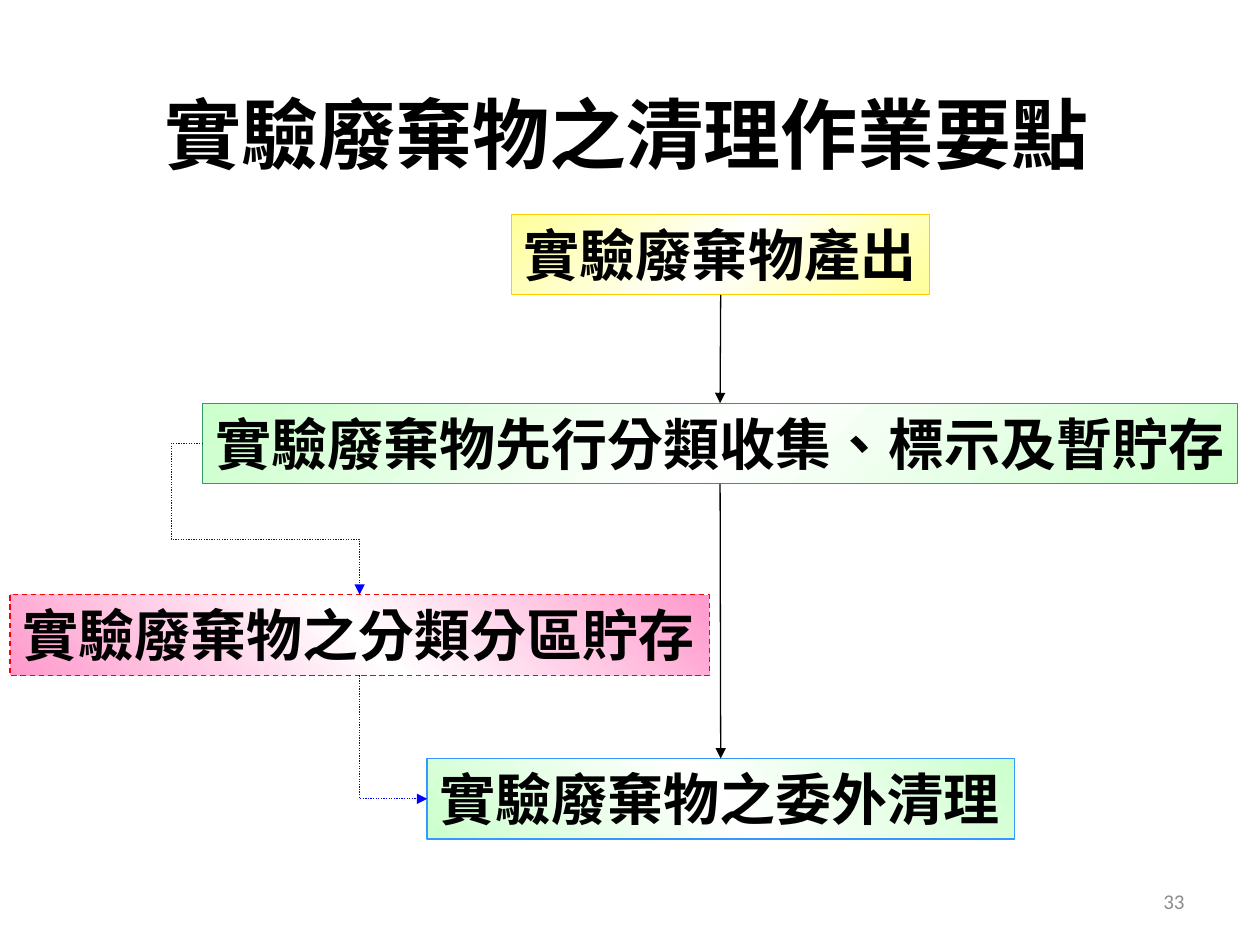
"""Builds the flow slide on handling laboratory waste."""
from dataclasses import dataclass
from typing import Optional

from lxml.etree import SubElement
from pptx import Presentation
from pptx.dml.color import RGBColor
from pptx.enum.dml import MSO_LINE_DASH_STYLE as Dash
from pptx.enum.lang import MSO_LANGUAGE_ID as Language
from pptx.enum.shapes import MSO_CONNECTOR as Connector, MSO_SHAPE as Shape
from pptx.enum.text import MSO_ANCHOR as Anchor, MSO_AUTO_SIZE as AutoSize, PP_ALIGN as Align
from pptx.oxml.ns import qn
from pptx.util import Inches, Pt

BLACK = RGBColor(0x00, 0x00, 0x00)
WHITE = RGBColor(0xFF, 0xFF, 0xFF)
GREY = RGBColor(0x8C, 0x8C, 0x8C)
BLUE = RGBColor(0x00, 0x00, 0xFF)
RED = RGBColor(0xFF, 0x00, 0x00)
GOLD = RGBColor(0xFF, 0xCC, 0x00)
YELLOW = RGBColor(0xFF, 0xFF, 0x99)
MINT = RGBColor(0xCC, 0xFF, 0xCC)
GREEN = RGBColor(0x33, 0x99, 0x66)
PINK = RGBColor(0xFF, 0x99, 0xCC)
SKY = RGBColor(0x33, 0x99, 0xFF)
STEP_HEIGHT = 0.64
LINE_WIDTH = Pt(0.75)
BODY_FONT = "Cabin"
MARK_FONT = "Times New Roman"
MARK = "、"


@dataclass(frozen=True)
class Step:
    text: str
    left: float
    top: float
    width: float
    tint: RGBColor
    border: RGBColor
    angle: int
    dash: Optional[Dash] = None

    @property
    def center(self) -> float:
        return self.left + self.width / 2

    @property
    def middle(self) -> float:
        return self.top + STEP_HEIGHT / 2

    @property
    def bottom(self) -> float:
        return self.top + STEP_HEIGHT


def fill_gradient(shape, tint: RGBColor, angle: int) -> None:
    shape.fill.gradient()
    gradient = shape.element.spPr.find(qn("a:gradFill"))
    stops = gradient.find(qn("a:gsLst"))
    for old_stop in list(stops):
        stops.remove(old_stop)
    for position, color in ((0, tint), (50, WHITE), (100, tint)):
        stop = SubElement(stops, qn("a:gs"), pos=str(position * 1000))
        SubElement(stop, qn("a:srgbClr"), val=str(color))
    gradient.find(qn("a:lin")).set("ang", str(angle * 60000))


def add_step(slide, step: Step) -> None:
    box = slide.shapes.add_shape(Shape.RECTANGLE, Inches(step.left), Inches(step.top),
                                 Inches(step.width), Inches(STEP_HEIGHT))
    box.shadow.inherit = False
    fill_gradient(box, step.tint, step.angle)
    box.line.color.rgb = step.border
    box.line.width = LINE_WIDTH
    if step.dash:
        box.line.dash_style = step.dash
    frame = box.text_frame
    frame.word_wrap = False
    frame.auto_size = AutoSize.SHAPE_TO_FIT_TEXT
    frame.vertical_anchor = Anchor.TOP
    paragraph = frame.paragraphs[0]
    paragraph.alignment = Align.LEFT
    paragraph.font.size = Pt(32)
    paragraph.font.bold = True
    paragraph.font.color.rgb = BLACK
    before, mark, after = step.text.partition(MARK)
    for text, font in ((before, BODY_FONT), (mark, MARK_FONT), (after, BODY_FONT)):
        if text:
            run = paragraph.add_run()
            run.text = text
            run.font.name = font
            run.font.language_id = Language.TRADITIONAL_CHINESE


def add_arrow(slide, kind: Connector, start: tuple[float, float], end: tuple[float, float],
              color: RGBColor, dash: Optional[Dash] = None):
    arrow = slide.shapes.add_connector(kind, *map(Inches, start + end))
    arrow.line.color.rgb = color
    arrow.line.width = LINE_WIDTH
    if dash:
        arrow.line.dash_style = dash
    SubElement(arrow.line._get_or_add_ln(), qn("a:tailEnd"), type="triangle")
    SubElement(arrow.element.spPr, qn("a:effectLst"))
    return arrow


def add_down_then_right(slide, start: tuple[float, float], end: tuple[float, float]) -> None:
    (x1, y1), (x2, y2) = start, end
    mid_x, mid_y = (x1 + x2) / 2, (y1 + y2) / 2
    half_run, half_drop = (x2 - x1) / 2, (y2 - y1) / 2
    arrow = add_arrow(slide, Connector.ELBOW, (mid_x + half_drop, mid_y - half_run),
                      (mid_x - half_drop, mid_y + half_run), BLUE, Dash.ROUND_DOT)
    properties = arrow.element.spPr
    properties.find(qn("a:xfrm")).set("rot", str(270 * 60000))
    properties.find(qn("a:prstGeom")).set("prst", "bentConnector2")


def add_around_left(slide, start: tuple[float, float], end: tuple[float, float]) -> None:
    arrow = add_arrow(slide, Connector.ELBOW, start, end, BLUE, Dash.ROUND_DOT)
    geometry = arrow.element.spPr.find(qn("a:prstGeom"))
    geometry.set("prst", "bentConnector4")
    guides = geometry.find(qn("a:avLst"))
    for name, value in (("adj1", -20100), ("adj2", 63500)):
        SubElement(guides, qn("a:gd"), name=name, fmla=f"val {value}")


def add_label(slide, text: str, place: tuple[float, float, float, float], size: int,
              color: RGBColor, align: Align, anchor: Anchor, bold: bool = False) -> None:
    frame = slide.shapes.add_textbox(*map(Inches, place)).text_frame
    frame.word_wrap = True
    frame.vertical_anchor = anchor
    paragraph = frame.paragraphs[0]
    paragraph.text = text
    paragraph.alignment = align
    paragraph.font.size = Pt(size)
    paragraph.font.bold = bold
    paragraph.font.name = "Calibri"
    paragraph.font.color.rgb = color
    paragraph.runs[0].font.language_id = Language.TRADITIONAL_CHINESE


def main() -> None:
    presentation = Presentation()
    presentation.slide_width, presentation.slide_height = Inches(10), Inches(7.5)
    slide = presentation.slides.add_slide(presentation.slide_layouts[6])

    output = Step("實驗廢棄物產出", 4.06, 1.7, 3.32, YELLOW, GOLD, 45)
    collection = Step("實驗廢棄物先行分類收集、標示及暫貯存", 1.61, 3.2, 8.21, MINT, GREEN, 45)
    storage = Step("實驗廢棄物之分類分區貯存", 0.08, 4.72, 5.55, PINK, RED, 315, Dash.DASH)
    disposal = Step("實驗廢棄物之委外清理", 3.39, 6.02, 4.66, MINT, SKY, 315)

    add_label(slide, "實驗廢棄物之清理作業要點", (1.08, 0.66, 7.79, 0.81), 44, BLACK,
              Align.CENTER, Anchor.BOTTOM, bold=True)
    for step in (output, collection, storage, disposal):
        add_step(slide, step)
    for above, below in ((output, collection), (collection, disposal)):
        add_arrow(slide, Connector.STRAIGHT, (above.center, above.bottom),
                  (below.center, below.top), BLACK)
    add_down_then_right(slide, (storage.center, storage.bottom), (disposal.left, disposal.middle))
    add_around_left(slide, (collection.left, collection.middle), (storage.center, storage.top))
    add_label(slide, "33", (7.17, 6.95, 2.33, 0.4), 12, GREY, Align.RIGHT, Anchor.MIDDLE)
    presentation.save("out.pptx")


if __name__ == "__main__":
    main()
